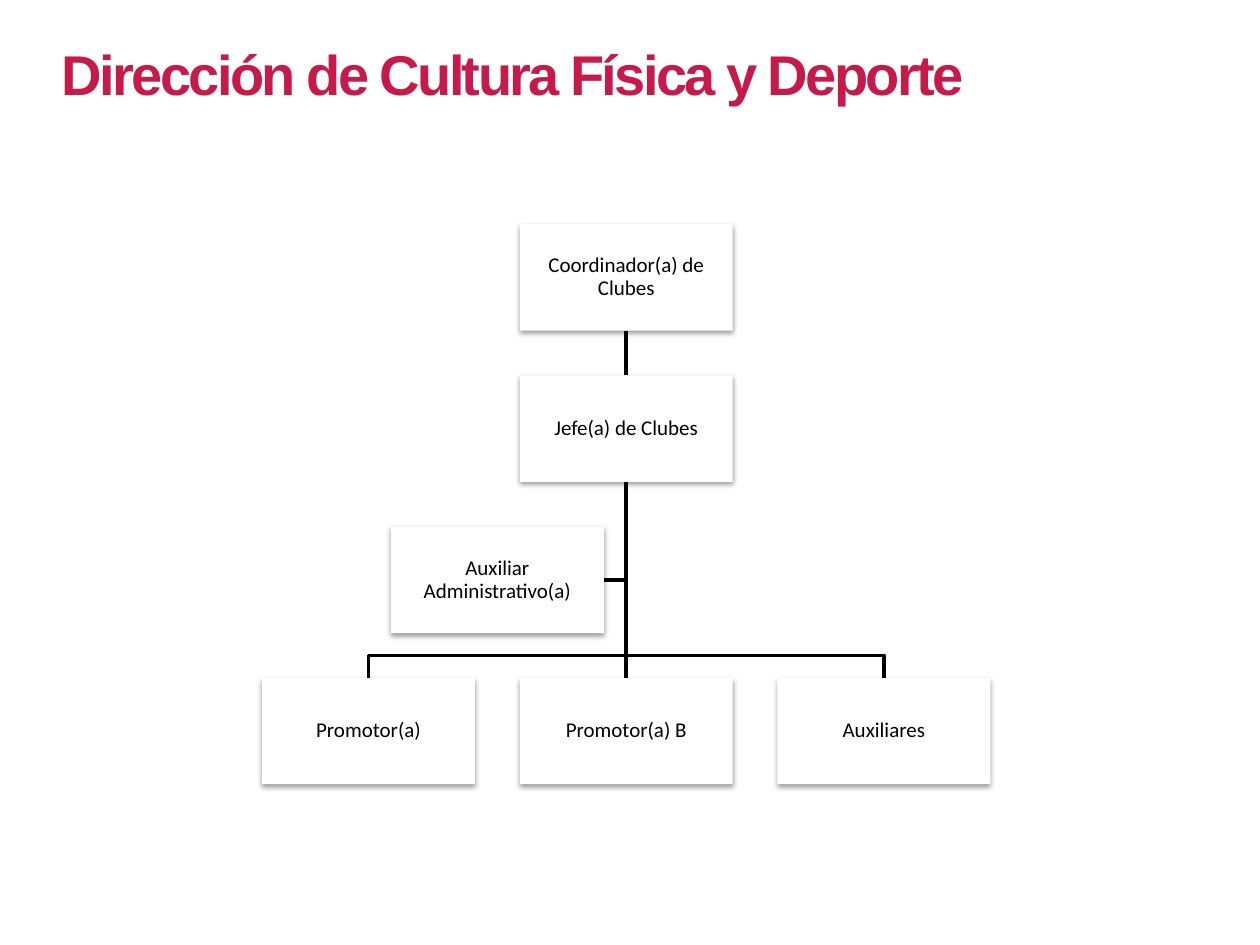
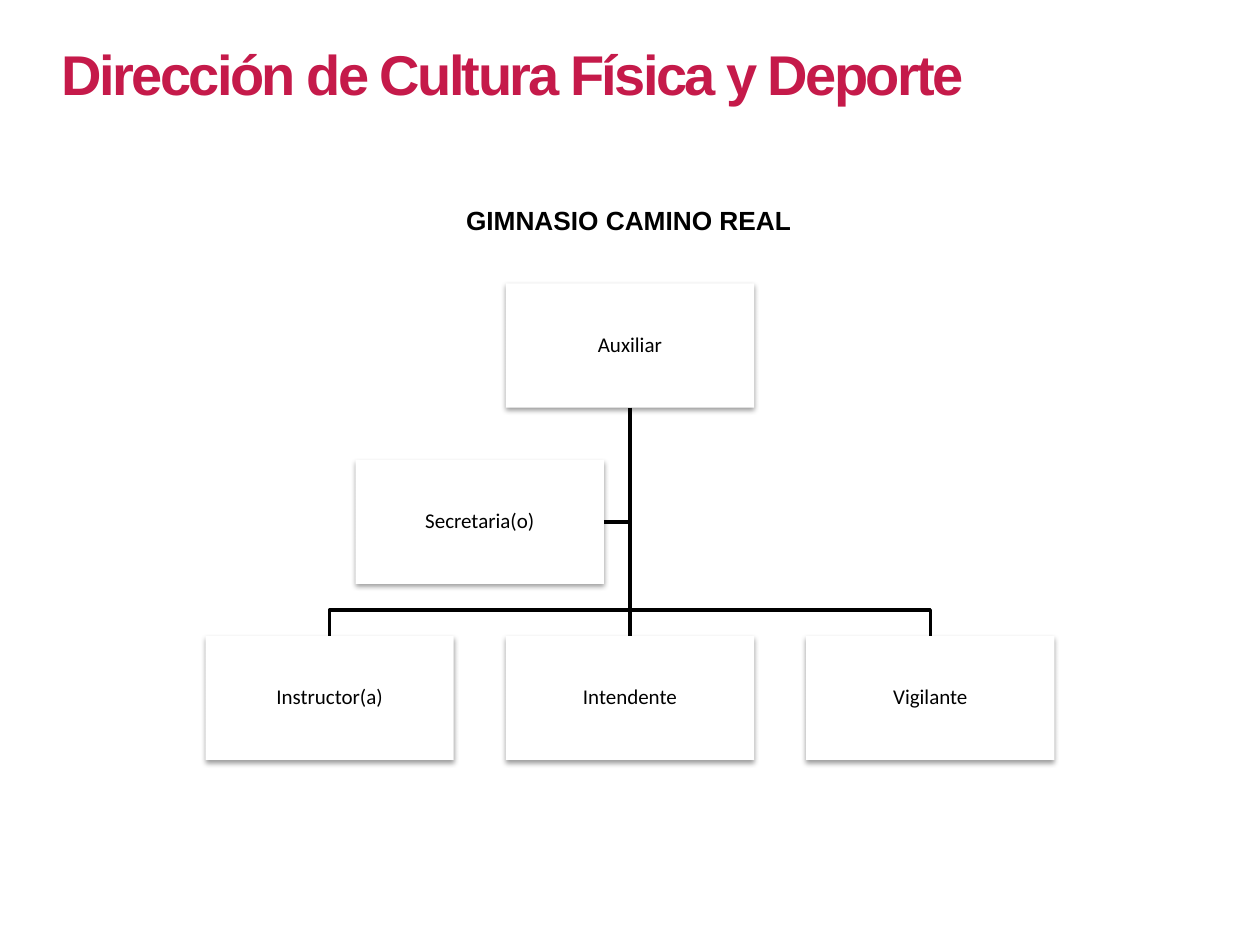
from lxml import etree
from pptx import Presentation
from pptx.dml.color import RGBColor
from pptx.enum import shapes, text
from pptx.oxml.ns import qn
from pptx.util import Inches, Pt

# Content: each chart has a chain of posts, one assistant and a row of reports
TITLE = "Dirección de Cultura Física y Deporte"
CHARTS = [
    {
        "heading": None,
        "chain": ["Coordinador(a) de Clubes", "Jefe(a) de Clubes"],
        "assistant": "Auxiliar Administrativo(a)",
        "reports": ["Promotor(a)", "Promotor(a) B", "Auxiliares"],
        "centre": 4.97, "top": 1.78, "box_width": 1.69,
    },
    {
        "heading": "GIMNASIO CAMINO REAL",
        "chain": ["Auxiliar"],
        "assistant": "Secretaria(o)",
        "reports": ["Instructor(a)", "Intendente", "Vigilante"],
        "centre": 5, "top": 2.25, "box_width": 1.97,
    },
]

# Shared look
CRIMSON = RGBColor(0xC5, 0x1A, 0x4A)
BLACK = RGBColor(0, 0, 0)
WHITE = RGBColor(0xFF, 0xFF, 0xFF)
LINE_WIDTH = Pt(2)
GAP_RATIO = 0.21  # gap between boxes, as a share of box width


def style_run(run, font, size, color, bold=False):
    run.font.name = font
    run.font.size = Pt(size)
    run.font.color.rgb = color
    run.font.bold = bold


def add_title(slide):
    title = slide.shapes.title
    title.left, title.top = Inches(0.39), Inches(0.26)
    title.width, title.height = Inches(7.69), Inches(0.64)
    frame = title.text_frame
    frame.text = TITLE
    frame.vertical_anchor = text.MSO_ANCHOR.TOP
    frame.auto_size = text.MSO_AUTO_SIZE.SHAPE_TO_FIT_TEXT
    frame.paragraphs[0].alignment = text.PP_ALIGN.LEFT
    run = frame.paragraphs[0].runs[0]
    style_run(run, "Arial", 32, CRIMSON, bold=True)
    run._r.get_or_add_rPr().set("spc", "-150")


def add_heading(slide, heading):
    box = slide.shapes.add_textbox(Inches(3.6), Inches(1.57), Inches(2.81), Inches(0.35))
    frame = box.text_frame
    frame.text = heading
    frame.word_wrap = False
    frame.auto_size = text.MSO_AUTO_SIZE.SHAPE_TO_FIT_TEXT
    style_run(frame.paragraphs[0].runs[0], "Arial", 15, BLACK, bold=True)


def add_soft_shadow(shape):
    shape.shadow.inherit = False
    effects = shape._element.spPr.find(qn("a:effectLst"))
    shadow = etree.SubElement(effects, qn("a:outerShdw"), blurRad=str(Pt(3.1)),
                              dist=str(Pt(1.6)), dir="5400000", rotWithShape="0")
    color = etree.SubElement(shadow, qn("a:srgbClr"), val=str(BLACK))
    etree.SubElement(color, qn("a:alpha"), val="38000")


def add_post(slide, name, left, top, width):
    post = slide.shapes.add_shape(shapes.MSO_SHAPE.RECTANGLE, Inches(left), Inches(top),
                                  Inches(width), Inches(width / 2))
    post.fill.solid()
    post.fill.fore_color.rgb = WHITE
    post.line.fill.background()
    add_soft_shadow(post)
    frame = post.text_frame
    frame.text = name
    frame.word_wrap = True
    frame.vertical_anchor = text.MSO_ANCHOR.MIDDLE
    frame.margin_left = frame.margin_right = Inches(0.01)
    frame.margin_top = frame.margin_bottom = Inches(0.01)
    paragraph = frame.paragraphs[0]
    paragraph.alignment = text.PP_ALIGN.CENTER
    paragraph.line_spacing = 0.9
    style_run(paragraph.runs[0], "Calibri", 12, BLACK)
    return post


def add_link(slide, x1, y1, x2, y2):
    link = slide.shapes.add_connector(shapes.MSO_CONNECTOR.STRAIGHT, x1, y1, x2, y2)
    link.line.color.rgb = BLACK
    link.line.width = LINE_WIDTH
    etree.SubElement(link._element.spPr, qn("a:effectLst"))
    return link


def link_down(slide, upper, lower):
    link = add_link(slide, 0, 0, 0, 0)
    link.begin_connect(upper, 2)
    link.end_connect(lower, 0)


def add_branches(slide, first, last, bus_y):
    """Draw the bracket that joins the outer reports to the trunk."""
    first_x, last_x = (post.left + post.width // 2 for post in (first, last))
    outline = slide.shapes.build_freeform(first_x, first.top)
    outline.add_line_segments([(first_x, bus_y), (last_x, bus_y), (last_x, last.top)],
                              close=False)
    branches = outline.convert_to_shape()
    branches.fill.background()
    branches.line.color.rgb = BLACK
    branches.line.width = LINE_WIDTH
    branches.shadow.inherit = False


def add_org_chart(slide, chart):
    centre, top, width = chart["centre"], chart["top"], chart["box_width"]
    gap = GAP_RATIO * width
    row_step = width / 2 + gap

    # Posts: chain, assistant to the left of the trunk, then the reports
    chain = [add_post(slide, name, centre - width / 2, top + row * row_step, width)
             for row, name in enumerate(chart["chain"])]
    assistant_top = top + len(chain) * row_step
    assistant = add_post(slide, chart["assistant"], centre - gap / 2 - width,
                         assistant_top, width)
    reports_top = assistant_top + row_step
    middle = len(chart["reports"]) // 2
    reports = [add_post(slide, name, centre - width / 2 + (i - middle) * (width + gap),
                        reports_top, width)
               for i, name in enumerate(chart["reports"])]

    # Lines: trunk, assistant's stub and outer branches
    trunk = chain + [reports[middle]]
    for upper, lower in zip(trunk, trunk[1:]):
        link_down(slide, upper, lower)
    stub_y = assistant.top + assistant.height // 2
    stub = add_link(slide, assistant.left + assistant.width, stub_y, Inches(centre), stub_y)
    stub.begin_connect(assistant, 3)
    add_branches(slide, reports[0], reports[-1], Inches(reports_top - gap / 2))


def main():
    deck = Presentation()
    deck.slide_width, deck.slide_height = Inches(10), Inches(7.5)
    title_only = deck.slide_layouts[5]
    for chart in CHARTS:
        slide = deck.slides.add_slide(title_only)
        add_title(slide)
        if chart["heading"]:
            add_heading(slide, chart["heading"])
        add_org_chart(slide, chart)
    deck.save("out.pptx")


if __name__ == "__main__":
    main()
